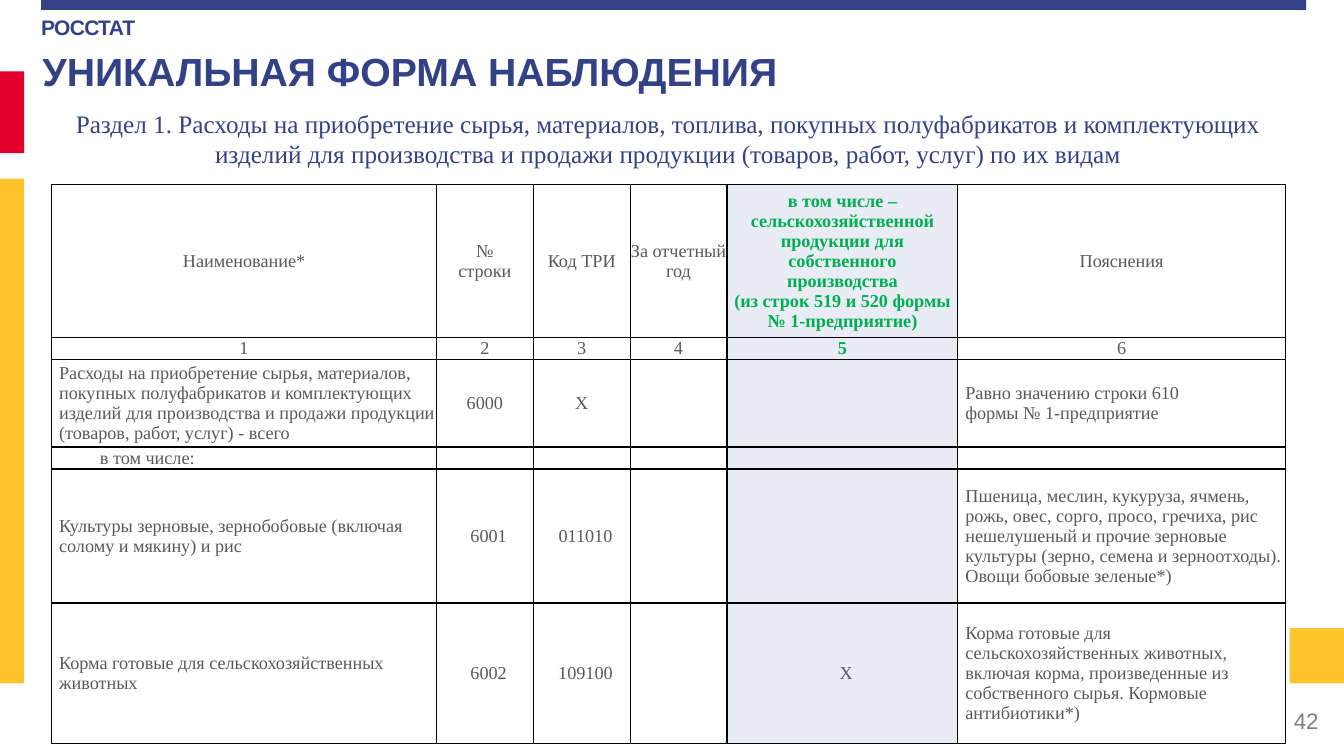
from lxml import etree
from pptx import Presentation
from pptx.dml.color import RGBColor
from pptx.enum.shapes import MSO_SHAPE
from pptx.enum.text import MSO_ANCHOR, PP_ALIGN
from pptx.oxml.ns import qn
from pptx.util import Cm, Pt

RECT = MSO_SHAPE.RECTANGLE
LEFT, MID, RIGHT = PP_ALIGN.LEFT, PP_ALIGN.CENTER, PP_ALIGN.RIGHT
TOP, CENTRE = MSO_ANCHOR.TOP, MSO_ANCHOR.MIDDLE

NAVY, RED, GOLD = "334286", "E1002B", "FFC32E"
GREY, GREEN, PALE, WHITE = "595959", "00B050", "E9EBF5", "FFFFFF"
SERIF = "Times New Roman"
PAD = 0.19
FOCUS = 4  # column for farm produce

COLS = [9.7, 2.44, 2.44, 2.44, 5.82, 8.25]
ROWS = [3.28, 0.48, 1.93, 0.48, 3.38, 3.53]
HEAD = [
    "Наименование*", "№\nстроки", "Код ТРИ", "За отчетный год",
    "в том числе – сельскохозяйственной продукции для собственного\n"
    "производства\n(из строк 519 и 520 формы\n№ 1-предприятие)",
    "Пояснения",
]
BODY = [
    ["Расходы на приобретение сырья, материалов, покупных полуфабрикатов "
     "и комплектующих изделий для производства и продажи продукции "
     "(товаров, работ, услуг) - всего",
     "6000", "Х", "", "",
     "Равно значению строки 610\nформы № 1-предприятие"],
    ["в том числе:", "", "", "", "", ""],
    ["Культуры зерновые, зернобобовые (включая солому и мякину) и рис",
     "6001", "011010", "", "",
     "Пшеница, меслин, кукуруза, ячмень, рожь, овес, сорго, просо, гречиха, "
     "рис нешелушеный и прочие зерновые культуры (зерно, семена и "
     "зерноотходы). Овощи бобовые зеленые*)"],
    ["Корма готовые для сельскохозяйственных животных",
     "6002", "109100", "", "X",
     "Корма готовые для сельскохозяйственных животных, включая корма, "
     "произведенные из собственного сырья. Кормовые антибиотики*)"],
]


def paint(target, color):
    """Give a fill or a font a solid colour."""
    if hasattr(target, "solid"):
        target.solid()
        target.fore_color.rgb = RGBColor.from_string(color)
    else:
        target.color.rgb = RGBColor.from_string(color)


def write(para, text, size=13, font=SERIF, color=GREY, bold=False,
          align=LEFT, before=0, track=0):
    """Put formatted text in a paragraph; track is in hundredths of a point."""
    para.alignment = align
    if before:
        para.space_before = Pt(before)
    if not text:
        etree.SubElement(para._p, qn("a:endParaRPr"), sz=str(size * 100))
        return
    run = para.add_run()
    run.text = text
    run.font.size, run.font.name, run.font.bold = Pt(size), font, bold
    paint(run.font, color)
    if track:
        run._r.get_or_add_rPr().set("spc", str(track))


def add_bar(slide, x, y, w, h, color):
    bar = slide.shapes.add_shape(RECT, Cm(x), Cm(y), Cm(w), Cm(h))
    bar.shadow.inherit = False
    paint(bar.fill, color)
    bar.line.fill.background()


def add_box(slide, x, y, w, h, anchor=TOP, inset=True):
    box = slide.shapes.add_textbox(Cm(x), Cm(y), Cm(w), Cm(h))
    frame = box.text_frame
    frame.word_wrap = True
    frame.vertical_anchor = anchor
    if not inset:
        frame.margin_left = frame.margin_right = 0
        frame.margin_top = frame.margin_bottom = 0
    return frame


def add_edges(cell):
    props = cell._tc.get_or_add_tcPr()
    for side in "LRTB":
        line = etree.SubElement(props, qn(f"a:ln{side}"), w=str(Pt(1)))
        fill = etree.SubElement(line, qn("a:solidFill"))
        etree.SubElement(fill, qn("a:srgbClr"), val="000000")


def fill_cell(cell, text, back, pad=0, **style):
    add_edges(cell)
    paint(cell.fill, back)
    cell.margin_left = Cm(pad)
    cell.margin_right = cell.margin_top = cell.margin_bottom = 0
    cell.vertical_anchor = CENTRE
    frame = cell.text_frame
    for i, part in enumerate(text.split("\n")):
        para = frame.add_paragraph() if i else frame.paragraphs[0]
        write(para, part, **style)


def add_form(slide, x, y):
    rows = [HEAD, [str(n + 1) for n in range(len(COLS))]] + BODY
    table = slide.shapes.add_table(
        len(ROWS), len(COLS), Cm(x), Cm(y), Cm(sum(COLS)), Cm(sum(ROWS))).table
    table.first_row = table.horz_banding = False
    for col, width in zip(table.columns, COLS):
        col.width = Cm(width)
    for row, height in zip(table.rows, ROWS):
        row.height = Cm(height)
    for r, row in enumerate(rows):
        for c, text in enumerate(row):
            head = r < 2
            prose = not head and c in (0, len(COLS) - 1)
            mark = head and c == FOCUS
            pad = PAD if prose or r > 3 else 0
            if text == "в том числе:":
                pad = 1.22
            fill_cell(table.cell(r, c), text, PALE if c == FOCUS else WHITE,
                      pad, align=LEFT if prose else MID, bold=mark,
                      color=GREEN if mark else GREY)


def main():
    deck = Presentation()
    deck.slide_width, deck.slide_height = Cm(33.87), Cm(19.05)
    slide = deck.slides.add_slide(deck.slide_layouts[6])

    add_bar(slide, 1.04, 0, 31.88, 0.25, NAVY)
    add_bar(slide, 0, 1.8, 0.61, 2.06, RED)
    add_bar(slide, 0, 4.5, 0.61, 12.72, GOLD)
    add_bar(slide, 32.5, 15.83, 1.37, 1.39, GOLD)

    agency = add_box(slide, 1.04, 0.37, 2.92, 0.8, inset=False)
    write(agency.paragraphs[0], "РОССТАТ", size=15, font="Arial",
          color=NAVY, bold=True, track=-50)

    title = add_box(slide, 0.82, 1.06, 32.03, 2.59)
    write(title.paragraphs[0], "УНИКАЛЬНАЯ ФОРМА НАБЛЮДЕНИЯ", size=28,
          font="Arial", color=NAVY, bold=True)
    write(title.add_paragraph(),
          "Раздел 1. Расходы на приобретение сырья, материалов, топлива, "
          "покупных полуфабрикатов и комплектующих изделий для производства "
          "и продажи продукции (товаров, работ, услуг) по их видам",
          size=18, color=NAVY, align=MID, before=10)

    add_form(slide, 1.3, 4.65)

    page = add_box(slide, 25.86, 17.65, 7.62, 1.02, anchor=CENTRE)
    write(page.paragraphs[0], "42", size=16, font="Arial", color="808080",
          align=RIGHT)

    deck.save("out.pptx")


if __name__ == "__main__":
    main()
